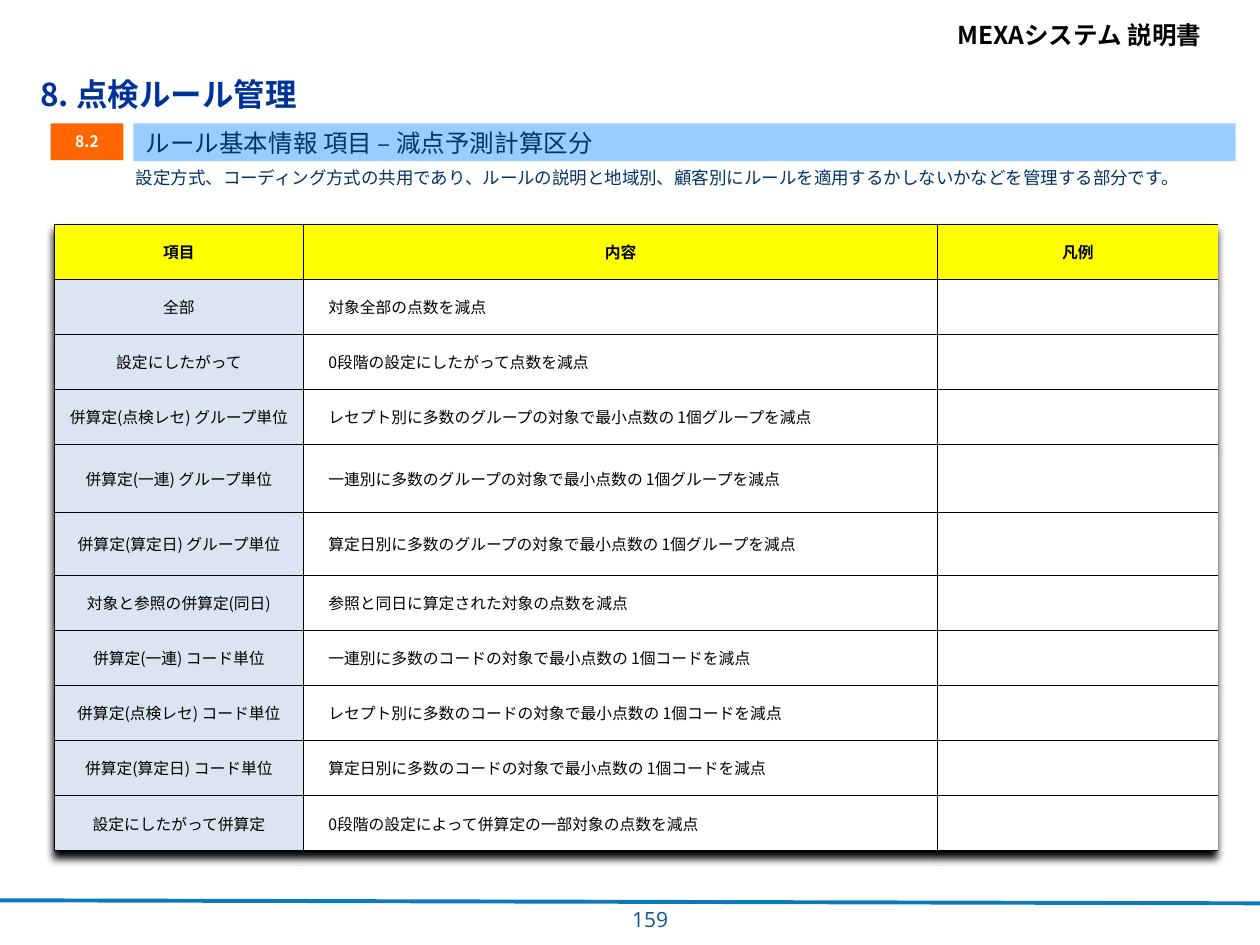
from lxml.etree import SubElement
from pptx import Presentation
from pptx.dml.color import RGBColor
from pptx.enum.shapes import MSO_CONNECTOR as Connector, MSO_SHAPE as Shape
from pptx.enum.text import MSO_ANCHOR as Anchor, PP_ALIGN as Align
from pptx.oxml import parse_xml
from pptx.oxml.ns import nsdecls, qn
from pptx.util import Cm, Pt

COLORS = {
    "black": "000000", "white": "FFFFFF", "title": "003399", "navy": "003366",
    "page": "125496", "rule": "0C79BC", "orange": "FF6600", "sky": "99CCFF",
    "header": "FFFF00", "label": "DBE5F1",
}
JAPANESE = "Noto Sans CJK JP"

HEADINGS = ["項目", "内容", "凡例"]
CALCULATION_TYPES = [
    ("全部", "対象全部の点数を減点"),
    ("設定にしたがって", "0段階の設定にしたがって点数を減点"),
    ("併算定(点検レセ) グループ単位", "レセプト別に多数のグループの対象で最小点数の 1個グループを減点"),
    ("併算定(一連) グループ単位", "一連別に多数のグループの対象で最小点数の 1個グループを減点"),
    ("併算定(算定日) グループ単位", "算定日別に多数のグループの対象で最小点数の 1個グループを減点"),
    ("対象と参照の併算定(同日)", "参照と同日に算定された対象の点数を減点"),
    ("併算定(一連) コード単位", "一連別に多数のコードの対象で最小点数の 1個コードを減点"),
    ("併算定(点検レセ) コード単位", "レセプト別に多数のコードの対象で最小点数の 1個コードを減点"),
    ("併算定(算定日) コード単位", "算定日別に多数のコードの対象で最小点数の 1個コードを減点"),
    ("設定にしたがって併算定", "0段階の設定によって併算定の一部対象の点数を減点"),
]
COLUMN_WIDTHS = [5.03, 12.78, 5.66]
ROW_HEIGHT = 1.11
TALL_ROWS = {4: 1.37, 5: 1.27}


def rgb(name):
    return RGBColor.from_string(COLORS[name])


class SlideBuilder:
    def __init__(self, slide, font=JAPANESE):
        self.slide = slide
        self.font = font

    def fill_text(self, frame, text, size, color, bold=False, align=Align.LEFT,
                  hanging=0, first_indent=0, font=None):
        frame.text = text
        paragraph = frame.paragraphs[0]
        paragraph.alignment = align
        properties = paragraph._p.get_or_add_pPr()
        properties.set("marL", str(Cm(hanging)))
        properties.set("indent", str(Cm(first_indent - hanging)))
        for run in paragraph.runs:
            run.font.size = Pt(size)
            run.font.bold = bold
            run.font.color.rgb = rgb(color)
            run.font.name = font or self.font
            SubElement(run._r.get_or_add_rPr(), qn("a:ea"), typeface=font or self.font)
        return paragraph

    def text(self, box, text, size, color, wrap=True, **style):
        frame = self.slide.shapes.add_textbox(*map(Cm, box)).text_frame
        frame.word_wrap = wrap
        self.fill_text(frame, text, size, color, **style)
        return frame

    def rectangle(self, box, fill, text, size, color, wrap=True,
                  anchor=Anchor.MIDDLE, **style):
        shape = self.slide.shapes.add_shape(Shape.RECTANGLE, *map(Cm, box))
        shape.shadow.inherit = False
        shape.fill.solid()
        shape.fill.fore_color.rgb = rgb(fill)
        shape.line.fill.background()
        shape.text_frame.word_wrap = wrap
        shape.text_frame.vertical_anchor = anchor
        return self.fill_text(shape.text_frame, text, size, color, **style)

    def line(self, start, end, color, width):
        connector = self.slide.shapes.add_connector(
            Connector.STRAIGHT, *map(Cm, start + end))
        connector.line.color.rgb = rgb(color)
        connector.line.width = Pt(width)
        SubElement(connector._element.spPr, qn("a:effectLst"))

    def table(self, left, top, widths, heights):
        table = self.slide.shapes.add_table(
            len(heights), len(widths), Cm(left), Cm(top),
            Cm(sum(widths)), Cm(sum(heights))).table
        table.first_row = table.horz_banding = False
        for column, width in zip(table.columns, widths):
            column.width = Cm(width)
        for row, height in zip(table.rows, heights):
            row.height = Cm(height)
        # Soft shadow below the whole table
        table._tbl.tblPr.insert(0, parse_xml(
            f'<a:effectLst {nsdecls("a")}><a:outerShdw blurRad="50800" dist="50800" '
            f'dir="5400000" algn="t" rotWithShape="0"><a:srgbClr val="{COLORS["black"]}"/>'
            '</a:outerShdw></a:effectLst>'))
        return table

    def cell(self, cell, fill, text="", borders="LRTB", **style):
        properties = cell._tc.get_or_add_tcPr()
        for side in "LRTB":
            border = SubElement(properties, qn(f"a:ln{side}"), w=str(Pt(0.5)))
            if side in borders:
                paint = SubElement(border, qn("a:solidFill"))
                SubElement(paint, qn("a:srgbClr"), val=COLORS["black"])
            else:
                SubElement(border, qn("a:noFill"))
        cell.fill.solid()
        cell.fill.fore_color.rgb = rgb(fill)
        cell.vertical_anchor = Anchor.MIDDLE
        cell.margin_left = cell.margin_right = cell.margin_top = cell.margin_bottom = 0
        if text:
            self.fill_text(cell.text_frame, text, 9, "black", **style)


def main():
    presentation = Presentation()
    presentation.slide_width, presentation.slide_height = Cm(25.4), Cm(19.05)
    builder = SlideBuilder(presentation.slides.add_slide(presentation.slide_layouts[6]))

    # Page frame: footer rule, manual name, page number
    builder.line((0, 18.15), (25.4, 18.21), "rule", 2.25)
    builder.text((19.05, 0.28, 5.49, 0.86), "MEXAシステム 説明書", 14, "black",
                 wrap=False, bold=True)
    builder.text((12.37, 18.16, 1.35, 0.71), "159", 12, "page",
                 align=Align.RIGHT, font="Open Sans")

    # Chapter title
    title = builder.text((0.56, 1.52, 24.74, 1.07), "8. 点検ルール管理", 18, "title",
                         bold=True, hanging=1.57)
    title.margin_top = title.margin_bottom = 0

    # Section heading and description
    description = builder.rectangle(
        (2.49, 3.25, 21.92, 0.69), "white",
        "設定方式、コーディング方式の共用であり、ルールの説明と地域別、"
        "顧客別にルールを適用するかしないかなどを管理する部分です。",
        10, "navy", wrap=False, anchor=Anchor.TOP, hanging=1.7)
    description.space_after = Pt(3)
    number = builder.rectangle((1.02, 2.49, 1.47, 0.74), "orange", "8.2", 9, "white",
                               bold=True, align=Align.CENTER, hanging=0.25)
    number.line_spacing = 0.95
    builder.rectangle((2.69, 2.49, 22.22, 0.76), "sky",
                      "ルール基本情報 項目 – 減点予測計算区分", 14, "navy", hanging=0.25)

    # Table of calculation types; its right edge stays open
    heights = [TALL_ROWS.get(row, ROW_HEIGHT) for row in range(len(CALCULATION_TYPES) + 1)]
    table = builder.table(1.09, 4.52, COLUMN_WIDTHS, heights)
    for column, heading in enumerate(HEADINGS):
        builder.cell(table.cell(0, column), "header", heading,
                     "LTB" if column == 2 else "LRTB", bold=True, align=Align.CENTER)
    for row, (label, content) in enumerate(CALCULATION_TYPES, start=1):
        builder.cell(table.cell(row, 0), "label", label, align=Align.CENTER)
        builder.cell(table.cell(row, 1), "white", content, first_indent=0.5)
        builder.cell(table.cell(row, 2), "white", borders="LTB")

    presentation.save("out.pptx")


if __name__ == "__main__":
    main()
